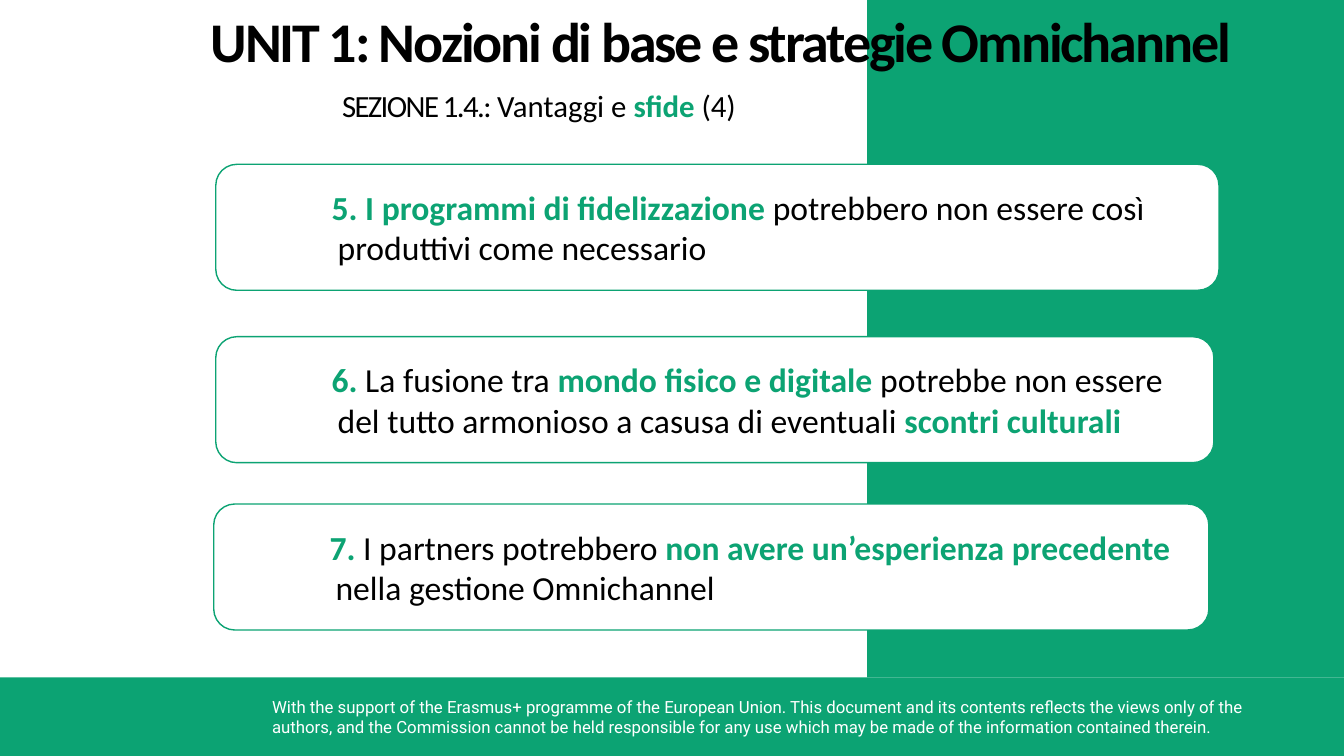
import pptx
import pptx.util
import pptx.dml.color
import pptx.enum.shapes
import pptx.enum.text

Inches, Pt = pptx.util.Inches, pptx.util.Pt
SHAPES = pptx.enum.shapes.MSO_SHAPE
ALIGN = pptx.enum.text.PP_ALIGN
ANCHOR = pptx.enum.text.MSO_ANCHOR


class Theme:
    green = pptx.dml.color.RGBColor.from_string("0CA373")
    white = pptx.dml.color.RGBColor.from_string("FFFFFF")
    black = pptx.dml.color.RGBColor.from_string("000000")
    title = {"name": "Calibri", "size": Pt(40), "bold": True}
    subtitle = {"name": "Calibri", "size": Pt(22), "bold": False}
    body = {"name": "Calibri", "size": Pt(24), "bold": False}
    strong = {"bold": True}
    footer = {"name": "Roboto", "size": Pt(12)}


SLIDE_W, SLIDE_H = 13.33, 7.5
FOOTER_TOP, PANEL_LEFT = 6.72, 8.6

# Each card: its box, then its lines of (text, is highlighted) pieces.
CARDS = [
    ((2.14, 1.63, 9.95, 1.25), [
        [("5. I programmi di fidelizzazione ", True),
         ("potrebbero non essere così", False)],
        [("produttivi come necessario", False)]]),
    ((2.14, 3.34, 9.9, 1.25), [
        [("6. ", True), ("La fusione tra ", False),
         ("mondo fisico e digitale ", True), ("potrebbe non essere", False)],
        [("del tutto armonioso a casusa di eventuali ", False),
         ("scontri culturali", True)]]),
    ((2.12, 5, 9.87, 1.25), [
        [("7. ", True), ("I partners potrebbero ", False),
         ("non avere un’esperienza precedente", True)],
        [("nella gestione Omnichannel", False)]]),
]


def set_attrs(obj, values):
    for name, value in values.items():
        setattr(obj, name, value)


def add_run(p, text, style, color, spacing=0):
    """Add a run; spacing is the letter spacing in points."""
    r = p.add_run()
    r.text = text
    set_attrs(r.font, style)
    r.font.color.rgb = color
    if spacing:
        r.font._element.set("spc", str(round(spacing * 100)))


def add_pieces(p, pieces, style):
    """Add runs, the highlighted ones bold and green."""
    for text, highlighted in pieces:
        extra = Theme.strong if highlighted else {}
        color = Theme.green if highlighted else Theme.black
        add_run(p, text, {**style, **extra}, color)


def add_box(slide, kind, box, fill):
    s = slide.shapes.add_shape(kind, *map(Inches, box))
    s.shadow.inherit = False
    s.fill.solid()
    s.fill.fore_color.rgb = fill
    s.line.fill.background()
    return s


def add_text(slide, box, **frame):
    s = slide.shapes.add_textbox(*map(Inches, box))
    set_attrs(s.text_frame, {"word_wrap": True, **frame})
    return s.text_frame.paragraphs[0]


def add_footer(slide, box):
    left, top, width, height = box
    add_box(slide, SHAPES.RECTANGLE, box, Theme.green)
    p = add_text(slide, (left + 2.6, top + 0.14, width - 2.91, 0.5))
    add_run(p, "With the support of the Erasmus+ programme of the European Union. "
               "This document and its contents reflects the views only of the "
               "authors, and the Commission cannot be held responsible for any use "
               "which may be made of the information contained therein.",
            Theme.footer, Theme.white)


def add_heading(slide, box):
    left, top, width, height = box
    flush = {"margin_left": 0, "margin_right": 0, "margin_bottom": 0}
    p = add_text(slide, (left, top, width, 0.62), margin_top=Inches(0.01), **flush)
    p.line_spacing = 0.9
    add_run(p, "UNIT 1: Nozioni di base e strategie Omnichannel",
            Theme.title, Theme.black, -1.5)

    p = add_text(slide, (left - 0.54, top + 0.71, 7.59, 0.39),
                 margin_top=Inches(0.02), **flush)
    p.alignment = ALIGN.CENTER
    add_run(p, "SEZIONE 1.4.: ", Theme.subtitle, Theme.black, -1.1)
    add_pieces(p, [("Vantaggi e ", False), ("sfide", True), (" (4)", False)],
               Theme.subtitle)


def add_card(slide, box, lines):
    s = add_box(slide, SHAPES.ROUNDED_RECTANGLE, box, Theme.white)
    s.line.color.rgb = Theme.green
    s.line.width = Pt(1)
    tf = s.text_frame
    set_attrs(tf, {"word_wrap": True, "vertical_anchor": ANCHOR.MIDDLE})
    for i, pieces in enumerate(lines):
        p = tf.paragraphs[0] if i == 0 else tf.add_paragraph()
        p.alignment = ALIGN.LEFT
        pPr = p._p.get_or_add_pPr()
        pPr.set("marL", str(Inches(1.05)))
        pPr.set("indent", str(Inches(-0.06 if i == 0 else 0)))
        add_pieces(p, pieces, Theme.body)


def main():
    prs = pptx.Presentation()
    prs.slide_width, prs.slide_height = Inches(SLIDE_W), Inches(SLIDE_H)
    slide = prs.slides.add_slide(prs.slide_layouts[6])
    add_footer(slide, (0, FOOTER_TOP, SLIDE_W, SLIDE_H - FOOTER_TOP))
    add_box(slide, SHAPES.RECTANGLE,
            (PANEL_LEFT, 0, SLIDE_W - PANEL_LEFT, FOOTER_TOP), Theme.green)
    add_heading(slide, (2.09, 0.13, 10.57, 1.1))
    for box, lines in CARDS:
        add_card(slide, box, lines)
    prs.save("out.pptx")


if __name__ == "__main__":
    main()
